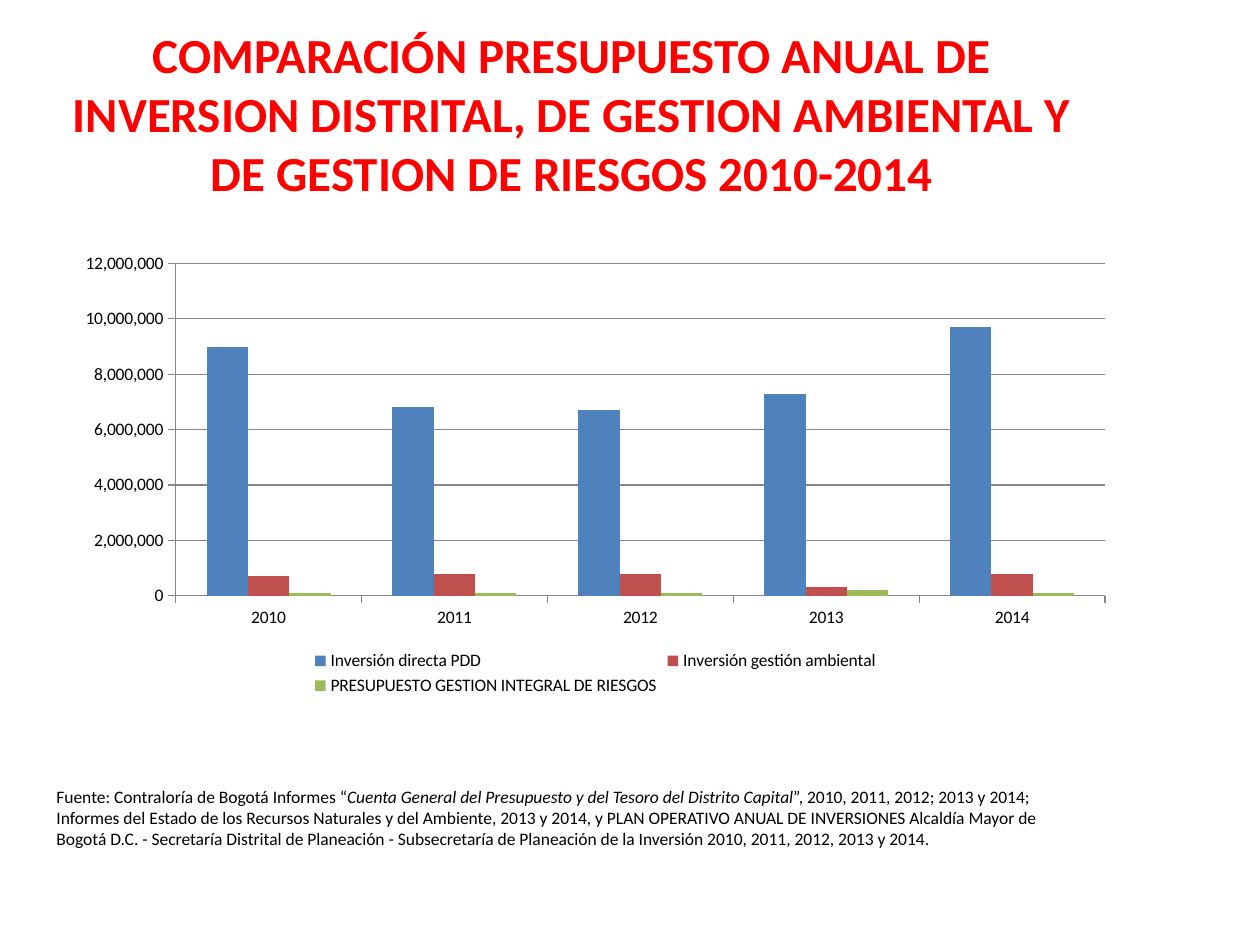
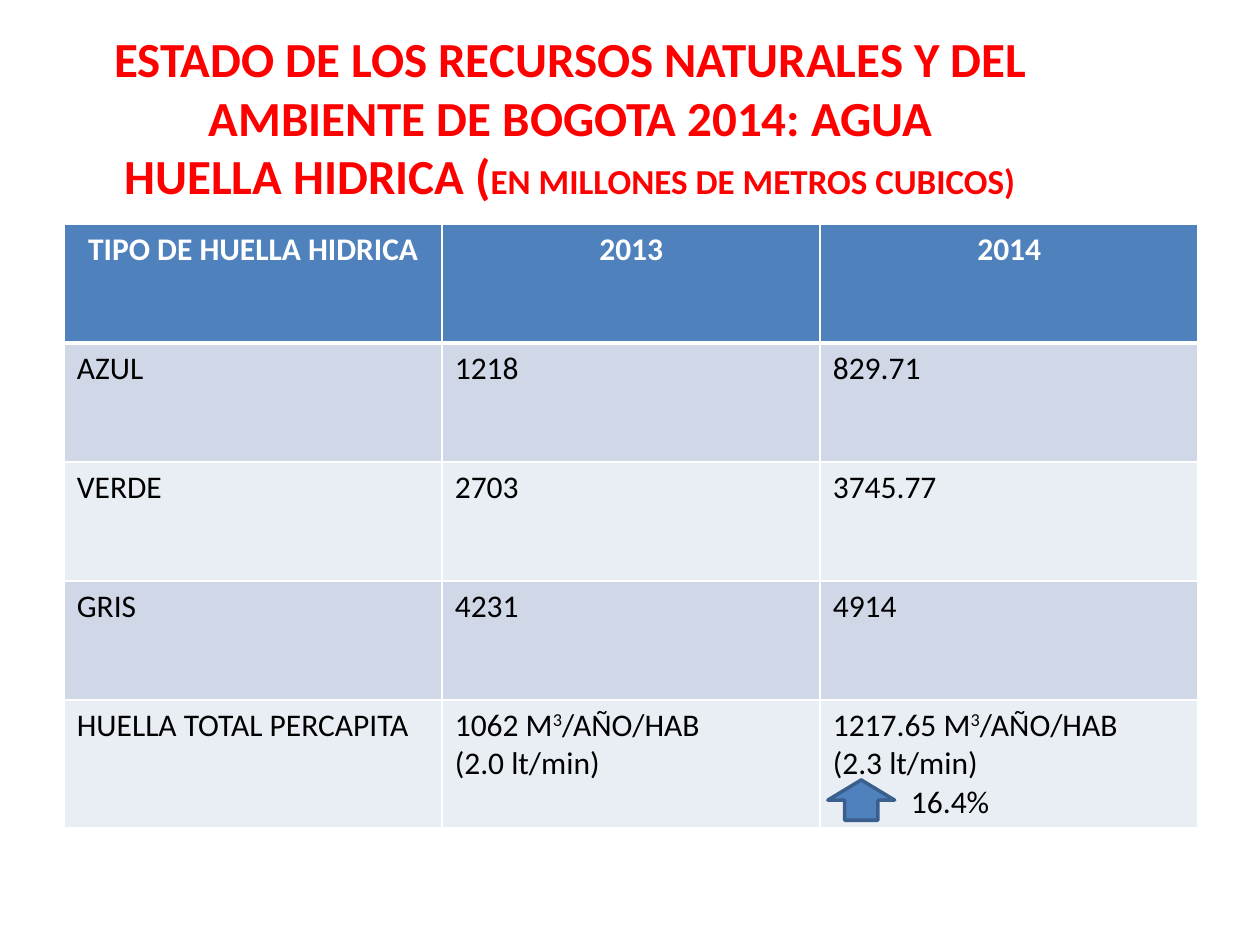
from dataclasses import dataclass, field
from itertools import product

from lxml.etree import SubElement
from pptx import Presentation
from pptx.chart.data import CategoryChartData
from pptx.dml.color import RGBColor
from pptx.enum.chart import XL_CHART_TYPE as ChartType, XL_LEGEND_POSITION as LegendPosition
from pptx.enum.chart import XL_TICK_MARK as TickMark
from pptx.enum.shapes import MSO_SHAPE as Preset
from pptx.enum.text import MSO_ANCHOR as Anchor, MSO_AUTO_SIZE as AutoSize, PP_ALIGN as Align
from pptx.oxml.ns import qn
from pptx.util import Inches, Pt

COLORS = {
    "title": "FF0000", "text": "000000", "white": "FFFFFF", "grid": "868686",
    "blue": "4F81BD", "red": "C0504D", "green": "9BBB59",
    "band_dark": "D0D8E8", "band_light": "E9EDF4", "arrow_line": "3A5F8C",
}
TITLE_FONT = {"name": "Calibri", "size": Pt(28), "bold": True}
SOURCE_FONT = {"name": "Calibri", "size": Pt(10)}
HEADER_FONT = {"name": "Calibri", "size": Pt(18), "bold": True}
CELL_FONT = {"name": "Calibri", "size": Pt(18), "bold": False}


@dataclass
class Box:
    left: float
    top: float
    width: float
    height: float

    def lengths(self) -> list:
        return [Inches(side) for side in (self.left, self.top, self.width, self.height)]


@dataclass
class Span:
    text: str
    font: dict = field(default_factory=dict)
    baseline: int = 0


@dataclass
class Line:
    spans: list
    indent: float = 0


@dataclass
class Series:
    name: str
    values: tuple
    color: str


def rgb(key: str) -> RGBColor:
    return RGBColor.from_string(COLORS[key])


def apply(target, values: dict) -> None:
    for attribute, value in values.items():
        setattr(target, attribute, value)


def write_lines(frame, lines: list, font: dict, color: str, align=Align.LEFT) -> None:
    for number, line in enumerate(lines):
        paragraph = frame.add_paragraph() if number else frame.paragraphs[0]
        paragraph.alignment = align
        if line.indent:
            paragraph._p.get_or_add_pPr().set("marL", str(Inches(line.indent)))
        for span in line.spans:
            for part_number, part in enumerate(span.text.split("\n")):
                if part_number:
                    paragraph.add_line_break()
                run = paragraph.add_run()
                run.text = part
                apply(run.font, font | span.font)
                run.font.color.rgb = rgb(color)
                if span.baseline:
                    run._r.get_or_add_rPr().set("baseline", str(span.baseline * 1000))


def add_titled_slide(deck, box: Box, spans: list):
    slide = deck.slides.add_slide(deck.slide_layouts[5])
    title = slide.shapes.title
    apply(title, dict(zip(("left", "top", "width", "height"), box.lengths())))
    apply(title.text_frame, {"word_wrap": True, "auto_size": AutoSize.NONE,
                             "vertical_anchor": Anchor.MIDDLE})
    write_lines(title.text_frame, [Line(spans)], TITLE_FONT, "title", Align.CENTER)
    return slide


def add_budget_chart(slide, box: Box, years: list, budgets: list) -> None:
    data = CategoryChartData(number_format="#,##0")
    data.categories = years
    for budget in budgets:
        data.add_series(budget.name, budget.values)
    chart = slide.shapes.add_chart(ChartType.COLUMN_CLUSTERED, *box.lengths(), data).chart
    apply(chart, {"has_title": False, "has_legend": True})
    apply(chart.font, SOURCE_FONT)
    chart.font.color.rgb = rgb("text")
    apply(chart.legend, {"position": LegendPosition.BOTTOM, "include_in_layout": False})
    columns = chart.plots[0]
    apply(columns, {"gap_width": 150, "overlap": 0, "vary_by_categories": False})
    for series, budget in zip(columns.series, budgets):
        series.format.fill.solid()
        series.format.fill.fore_color.rgb = rgb(budget.color)
    amounts = chart.value_axis
    apply(amounts, {"minimum_scale": 0, "maximum_scale": 12_000_000,
                    "major_unit": 2_000_000, "has_major_gridlines": True})
    apply(amounts.tick_labels, {"number_format": "#,##0", "number_format_is_linked": False})
    for axis in (amounts, chart.category_axis):
        axis.major_tick_mark = TickMark.OUTSIDE
        axis.format.line.color.rgb = rgb("grid")
    amounts.major_gridlines.format.line.color.rgb = rgb("grid")


def set_borders(cell, widths: dict) -> None:
    properties = cell._tc.get_or_add_tcPr()
    for side, points in widths.items():
        border = SubElement(properties, qn(f"a:ln{side}"), w=str(Pt(points)))
        fill = SubElement(border, qn("a:solidFill"))
        SubElement(fill, qn("a:srgbClr"), val=COLORS["white"])


def add_footprint_table(slide, box: Box, rows: list) -> None:
    row_count, column_count = len(rows), len(rows[0])
    table = slide.shapes.add_table(row_count, column_count, *box.lengths()).table
    for row in table.rows:
        row.height = Inches(box.height / row_count)
    for row, column in product(range(row_count), range(column_count)):
        cell = table.cell(row, column)
        set_borders(cell, {"L": 1, "R": 1, "T": 3 if row == 1 else 1, "B": 1 if row else 3})
        fill = "band_dark" if row % 2 else "band_light"
        style = (CELL_FONT, "text", Align.LEFT)
        if row == 0:
            fill, style = "blue", (HEADER_FONT, "white", Align.CENTER)
        cell.fill.solid()
        cell.fill.fore_color.rgb = rgb(fill)
        content = rows[row][column]
        lines = [Line([Span(content)])] if isinstance(content, str) else content
        write_lines(cell.text_frame, lines, *style)


def add_increase_arrow(slide, box: Box) -> None:
    arrow = slide.shapes.add_shape(Preset.DOWN_ARROW, *box.lengths())
    arrow.rotation = 180
    arrow.shadow.inherit = False
    arrow.fill.solid()
    arrow.fill.fore_color.rgb = rgb("blue")
    arrow.line.color.rgb = rgb("arrow_line")
    arrow.line.width = Pt(2)


def per_capita(volume: str, flow: str) -> list:
    return [Line([Span(f"{volume} M"), Span("3", baseline=30), Span("/AÑO/HAB")]),
            Line([Span(f"({flow} lt/min)")])]


def build_budget_slide(deck) -> None:
    slide = add_titled_slide(deck, Box(0.35, 0.14, 8.37, 1.51), [
        Span("COMPARACIÓN PRESUPUESTO ANUAL DE INVERSION DISTRITAL, "
             "DE GESTION AMBIENTAL Y DE GESTION DE RIESGOS 2010-2014")])
    source = slide.shapes.add_textbox(*Box(0.35, 6.19, 8.27, 0.91).lengths()).text_frame
    source.word_wrap = True
    write_lines(source, [Line([
        Span("Fuente: Contraloría de Bogotá Informes “"),
        Span("Cuenta General del Presupuesto y del Tesoro del Distrito Capital", {"italic": True}),
        Span("”, 2010, 2011, 2012; 2013 y 2014; Informes del Estado de los Recursos Naturales "
             "y del Ambiente, 2013 y 2014, y PLAN OPERATIVO ANUAL DE INVERSIONES Alcaldía Mayor "
             "de Bogotá D.C. - Secretaría Distrital de Planeación - Subsecretaría de Planeación "
             "de la Inversión 2010, 2011, 2012, 2013 y 2014."),
    ])], SOURCE_FONT, "text")
    add_budget_chart(slide, Box(0.51, 1.94, 8.43, 3.62), [str(y) for y in range(2010, 2015)], [
        Series("Inversión directa PDD",
               (9_000_000, 6_800_000, 6_700_000, 7_300_000, 9_700_000), "blue"),
        Series("Inversión gestión ambiental",
               (700_000, 800_000, 800_000, 300_000, 800_000), "red"),
        Series("PRESUPUESTO GESTION INTEGRAL DE RIESGOS",
               (100_000, 100_000, 100_000, 200_000, 100_000), "green"),
    ])


def build_footprint_slide(deck) -> None:
    slide = add_titled_slide(deck, Box(0.35, 0.3, 8.35, 1.25), [
        Span("ESTADO DE LOS RECURSOS NATURALES Y DEL AMBIENTE DE BOGOTA 2014: AGUA\n"
             "HUELLA HIDRICA ("),
        Span("EN MILLONES DE METROS CUBICOS)", {"size": Pt(20)})])
    increase = Line([Span("16.4%")], indent=0.62)
    add_footprint_table(slide, Box(0.51, 1.78, 9, 4.72), [
        ("TIPO DE HUELLA HIDRICA", "2013", "2014"),
        ("AZUL", "1218", "829.71"),
        ("VERDE", "2703", "3745.77"),
        ("GRIS", "4231", "4914"),
        ("HUELLA TOTAL PERCAPITA", per_capita("1062", "2.0"),
         per_capita("1217.65", "2.3") + [increase]),
    ])
    add_increase_arrow(slide, Box(6.57, 6.19, 0.53, 0.32))


def main() -> None:
    """Build the budget and water footprint slides."""
    deck = Presentation()
    apply(deck, {"slide_width": Inches(10), "slide_height": Inches(7.5)})
    build_budget_slide(deck)
    build_footprint_slide(deck)
    deck.save("out.pptx")


if __name__ == "__main__":
    main()
